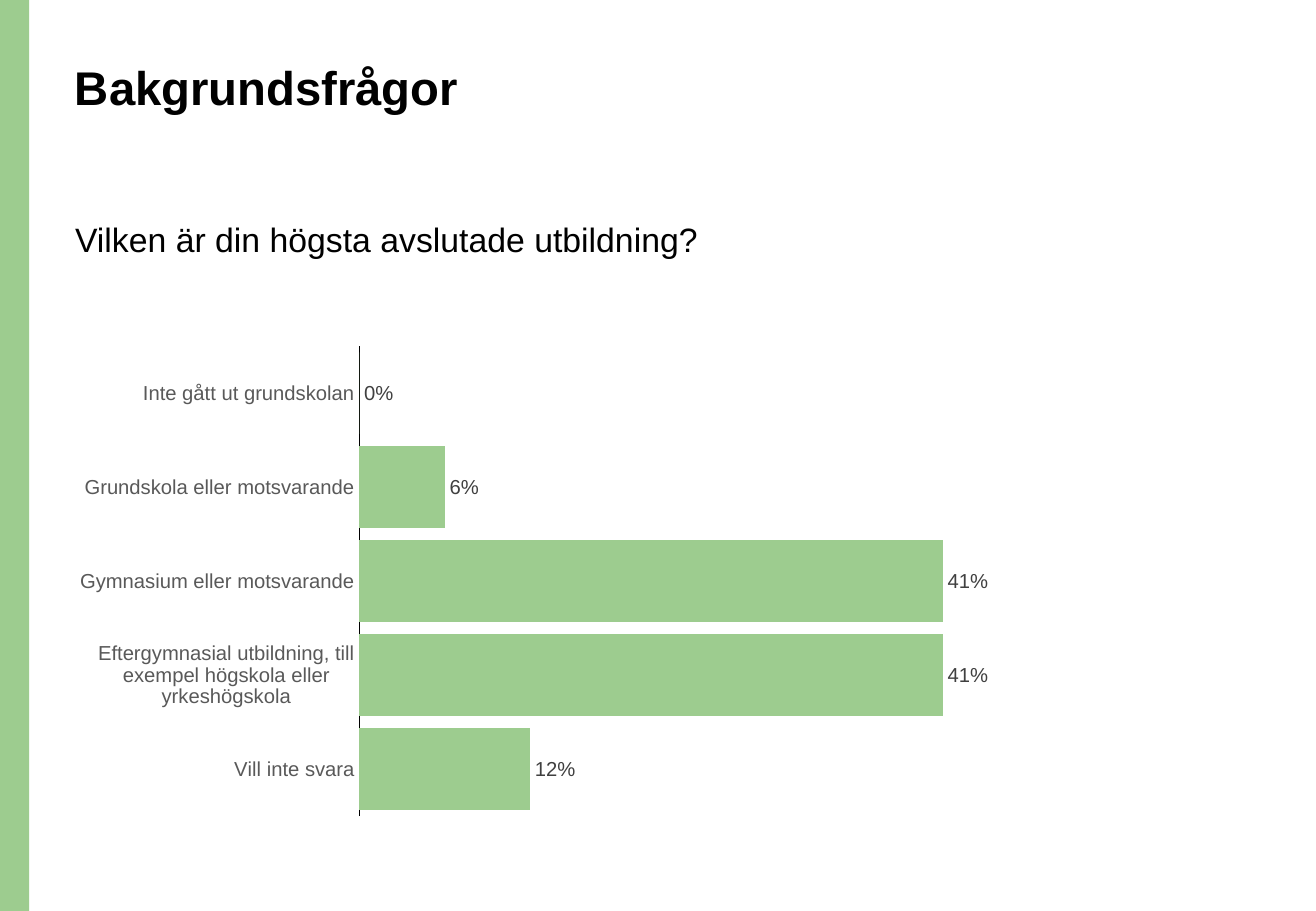
"""Build the slide on the respondents' highest completed education."""
from lxml.etree import SubElement
from pptx import Presentation
from pptx.chart.data import CategoryChartData
from pptx.dml.color import RGBColor
from pptx.enum.chart import XL_CHART_TYPE, XL_LABEL_POSITION, XL_TICK_MARK
from pptx.enum.shapes import MSO_SHAPE
from pptx.oxml.ns import qn
from pptx.util import Pt

GREEN, BLACK, AXIS_GREY, LABEL_GREY = "9DCC8F", "000000", "595959", "404040"
WIDTH, HEIGHT, LEFT = 780, 540, 37.4
TEXTS = [
    ("Bakgrundsfrågor", 34.5, 672.5, 73.4, 28, True),
    ("Vilken är din högsta avslutade utbildning?", 128.9, 471.6, 53.3, 20, False),
]
ANSWERS = {
    "Inte gått ut grundskolan": 0,
    "Grundskola eller motsvarande": 0.06,
    "Gymnasium eller motsvarande": 0.41,
    "Eftergymnasial utbildning, till exempel högskola eller yrkeshögskola": 0.41,
    "Vill inte svara": 0.12,
}
PLOT_LAYOUT = [("layoutTarget", "inner"), ("xMode", "edge"), ("yMode", "edge"),
               ("x", 0.31), ("y", 0.02), ("w", 0.67), ("h", 0.96)]


def color(value):
    return RGBColor.from_string(value)


def style_font(font, size, value, bold=False):
    font.name, font.size, font.bold = "Arial", Pt(size), bold
    font.color.rgb = color(value)


def add_text(slide, text, top, width, height, size, bold):
    box = slide.shapes.add_textbox(Pt(LEFT), Pt(top), Pt(width), Pt(height))
    box.text_frame.word_wrap = True
    paragraph = box.text_frame.paragraphs[0]
    paragraph.text = text
    paragraph.line_spacing = 0.9
    style_font(paragraph.font, size, BLACK, bold)


def place_plot(chart):
    plot_area = chart.plots[0]._element.getparent()
    for layout in plot_area.findall(qn("c:layout")):
        plot_area.remove(layout)
    layout = SubElement(plot_area, qn("c:layout"))
    plot_area.insert(0, layout)
    manual = SubElement(layout, qn("c:manualLayout"))
    for name, value in PLOT_LAYOUT:
        SubElement(manual, qn(f"c:{name}")).set("val", str(value))


def add_answers(slide):
    data = CategoryChartData(number_format="0%")
    data.categories = list(ANSWERS)
    data.add_series("Series 1", list(ANSWERS.values()))
    chart = slide.shapes.add_chart(XL_CHART_TYPE.BAR_CLUSTERED, Pt(LEFT), Pt(199.4),
                                   Pt(566.6), Pt(290.2), data).chart
    chart.has_legend = chart.has_title = False
    style_font(chart.font, 10, BLACK)
    place_plot(chart)

    categories = chart.category_axis
    categories.reverse_order = True
    categories.has_major_gridlines = False
    categories.major_tick_mark = categories.minor_tick_mark = XL_TICK_MARK.NONE
    categories.format.line.color.rgb = color(BLACK)
    categories.format.line.width = Pt(0.75)
    style_font(categories.tick_labels.font, 12, AXIS_GREY)

    values = chart.value_axis
    values.minimum_scale, values.maximum_scale = 0, 0.45
    values.has_major_gridlines = values.visible = False

    plot = chart.plots[0]
    plot.gap_width = 15
    plot.vary_by_categories = False
    series = plot.series[0]
    series.format.fill.solid()
    series.format.fill.fore_color.rgb = color(GREEN)
    labels = series.data_labels
    labels.show_value = True
    labels.number_format, labels.number_format_is_linked = "0%", False
    labels.position = XL_LABEL_POSITION.OUTSIDE_END
    style_font(labels.font, 12, LABEL_GREY)


def main():
    presentation = Presentation()
    presentation.slide_width, presentation.slide_height = Pt(WIDTH), Pt(HEIGHT)
    slide = presentation.slides.add_slide(presentation.slide_layouts[6])
    stripe = slide.shapes.add_shape(MSO_SHAPE.RECTANGLE, 0, 0, Pt(17.3), Pt(HEIGHT))
    stripe.shadow.inherit = False
    stripe.fill.solid()
    stripe.fill.fore_color.rgb = color(GREEN)
    stripe.line.fill.background()
    for text in TEXTS:
        add_text(slide, *text)
    add_answers(slide)
    presentation.save("out.pptx")


if __name__ == "__main__":
    main()
